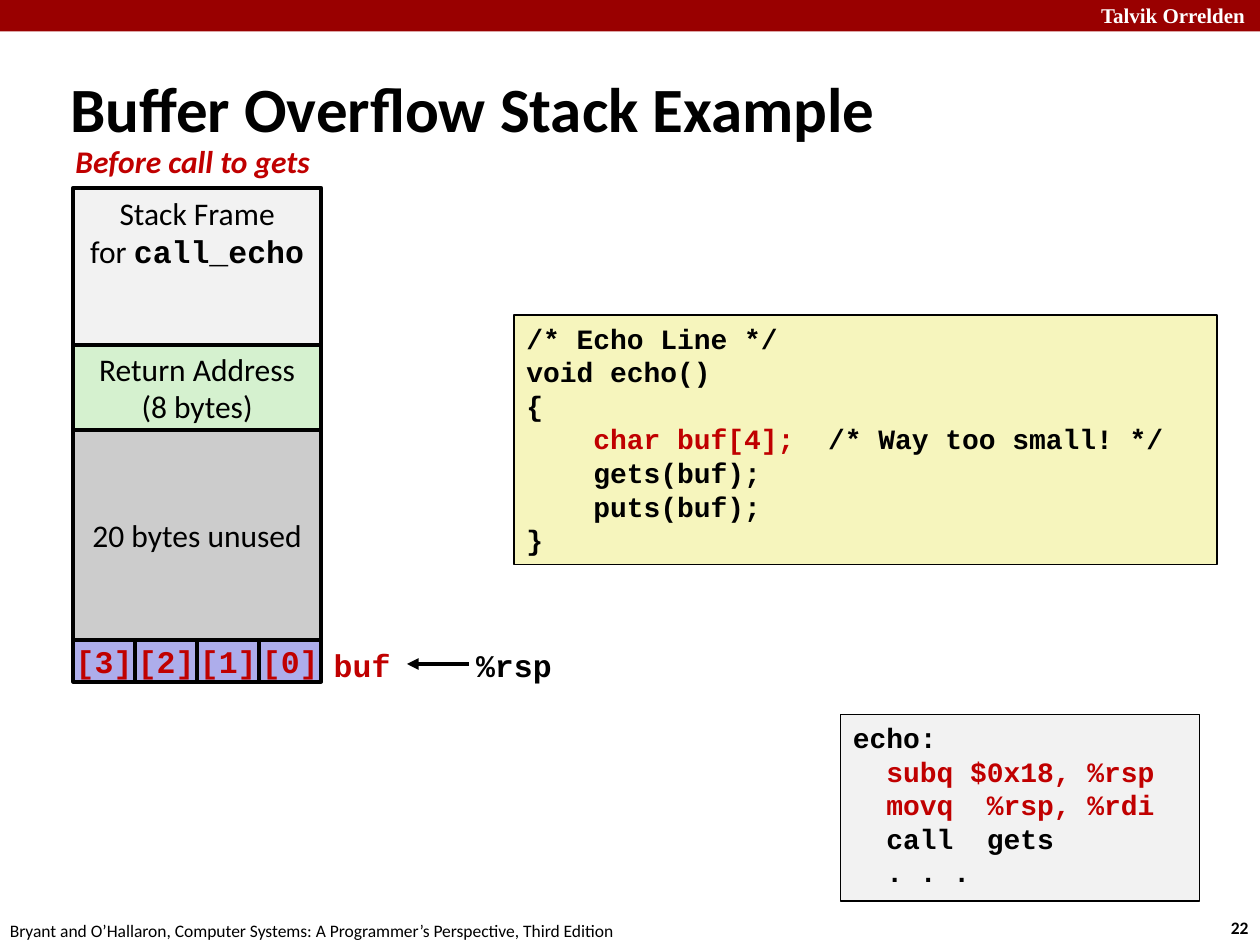
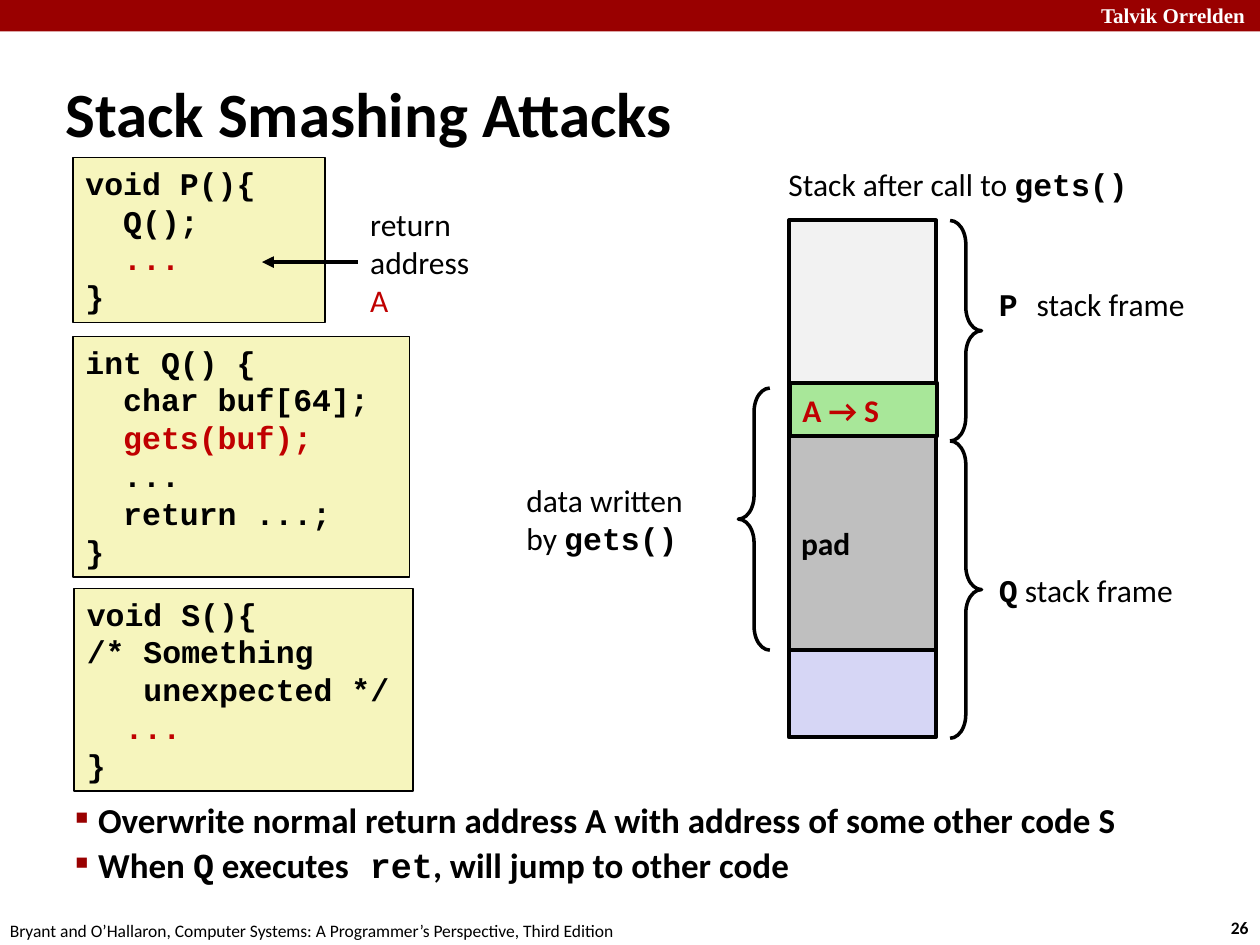
"""Build two slides on buffer overflow and stack smashing."""
import dataclasses
import typing

import lxml.etree
import pptx
import pptx.dml.color
import pptx.enum.shapes
import pptx.enum.text
import pptx.oxml.ns
import pptx.slide
import pptx.util

Inches = pptx.util.Inches
Pt = pptx.util.Pt
Kind = pptx.enum.shapes.MSO_SHAPE
Anchor = pptx.enum.text.MSO_ANCHOR
Align = pptx.enum.text.PP_ALIGN
qn = pptx.oxml.ns.qn

BLACK, WHITE, RED, BAND = "000000", "FFFFFF", "C00000", "990000"
CREAM, PALE, MINT, GREEN = "F6F5BD", "F2F2F2", "D5F1CF", "A8E799"
GREY, DARK, BLUE, LILAC = "CCCCCC", "BFBFBF", "ADADEB", "D6D6F5"
THICK, THIN = 2.25, 1


@dataclasses.dataclass(frozen=True)
class Style:
    """Look of a run of text."""
    font: str = "Calibri"
    size: float = 18
    color: str = BLACK
    bold: bool = False
    slant: bool = False


PLAIN, STRONG = Style(), Style(bold=True)
MONO = Style("Courier New", bold=True)
HOT = dataclasses.replace(MONO, color=RED)
SMALL, SMALL_HOT = (dataclasses.replace(s, size=16) for s in (MONO, HOT))
TITLE = Style(size=36, bold=True)
POINT, POINT_MONO = Style(size=20, bold=True), dataclasses.replace(MONO, size=20)
FOOT = Style(size=10)
HEAD = Style("Times New Roman", 12, WHITE, True)


@dataclasses.dataclass(frozen=True)
class Box:
    """Text box or filled box; each bar in a line swaps base and alt style."""
    left: float
    top: float
    width: float
    height: float
    text: str = ""
    base: Style = PLAIN
    alt: Style = MONO
    fill: str = ""
    edge: float = 0
    mid: bool = False
    center: bool = False
    fit: bool = False


@dataclasses.dataclass(frozen=True)
class Brace:
    """Curly brace beside a stack."""
    kind: Kind
    left: float
    top: float
    height: float


def rgb(code: str) -> pptx.dml.color.RGBColor:
    """Turn a hex string into a colour."""
    return pptx.dml.color.RGBColor.from_string(code)


def tint(run: typing.Any, style: Style) -> None:
    """Apply a style to a run."""
    run.font.name = style.font
    run.font.size = Pt(style.size)
    run.font.color.rgb = rgb(style.color)
    run.font.bold = style.bold
    run.font.italic = style.slant


def write(frame: typing.Any, box: Box) -> None:
    """Fill a text frame with the styled lines of a box."""
    lines = [line.split("|") for line in box.text.split("\n")]
    frame.text = "\n".join(line[0] for line in lines)
    frame.word_wrap = not (box.fit or box.center)
    frame.vertical_anchor = Anchor.MIDDLE if box.mid else Anchor.TOP
    if box.fit:
        frame.auto_size = pptx.enum.text.MSO_AUTO_SIZE.SHAPE_TO_FIT_TEXT
    for para, line in zip(frame.paragraphs, lines):
        para.alignment = Align.CENTER if box.center else Align.LEFT
        for run in para.runs:
            tint(run, box.base)
        for spot, piece in enumerate(line[1:]):
            run = para.add_run()
            run.text = piece
            tint(run, box.base if spot % 2 else box.alt)


def draw(slide: pptx.slide.Slide, box: Box) -> typing.Any:
    """Draw one box and return its shape."""
    place = [Inches(n) for n in (box.left, box.top, box.width, box.height)]
    if box.fill:
        shape = slide.shapes.add_shape(Kind.RECTANGLE, *place)
        shape.shadow.inherit = False
        shape.fill.solid()
        shape.fill.fore_color.rgb = rgb(box.fill)
        if box.edge:
            ink(shape, box.edge)
        else:
            shape.line.fill.background()
    else:
        shape = slide.shapes.add_textbox(*place)
    if box.text:
        write(shape.text_frame, box)
    return shape


def ink(shape: typing.Any, width: float) -> None:
    """Give a shape a black line."""
    shape.line.color.rgb = rgb(BLACK)
    shape.line.width = Pt(width)


def label(left: float, top: float, width: float, height: float, text: str,
          base: Style = PLAIN, alt: Style = MONO) -> Box:
    """Make a label that fits its text."""
    return Box(left, top, width, height, text, base, alt, fit=True)


def code(left: float, top: float, width: float, height: float, text: str,
         base: Style = MONO, alt: Style = HOT, fill: str = CREAM) -> Box:
    """Make a box that lists code."""
    return Box(left, top, width, height, text, base, alt, fill, THIN)


def arrow(slide: pptx.slide.Slide, start: float, end: float, level: float) -> None:
    """Draw a level arrow."""
    line = slide.shapes.add_connector(
        pptx.enum.shapes.MSO_CONNECTOR.STRAIGHT,
        Inches(start), Inches(level), Inches(end), Inches(level))
    ink(line, THICK)
    props = line._element.spPr
    tail = lxml.etree.SubElement(props.find(qn("a:ln")), qn("a:tailEnd"))
    tail.set("type", "triangle")
    lxml.etree.SubElement(props, qn("a:effectLst"))


def clasp(slide: pptx.slide.Slide, brace: Brace) -> None:
    """Draw a brace."""
    shape = slide.shapes.add_shape(
        brace.kind, Inches(brace.left), Inches(brace.top),
        Inches(0.25), Inches(brace.height))
    shape.shadow.inherit = False
    shape.fill.background()
    ink(shape, 2)
    shape.adjustments[0] = 0.75


def bullet(frame: typing.Any) -> None:
    """Mark each paragraph with a small square."""
    for para in frame.paragraphs:
        para.line_spacing = 0.9
        para.space_before = Pt(4)
        props = para._p.get_or_add_pPr()
        props.set("marL", str(Inches(0.18)))
        props.set("indent", str(-Inches(0.18)))
        color = lxml.etree.SubElement(props, qn("a:buClr"))
        lxml.etree.SubElement(color, qn("a:srgbClr")).set("val", BAND)
        lxml.etree.SubElement(props, qn("a:buSzPct")).set("val", "50000")
        lxml.etree.SubElement(props, qn("a:buChar")).set("char", "■")


def start(deck: typing.Any, page: int, title: Box) -> pptx.slide.Slide:
    """Add a slide with the shared band, footer and title."""
    slide = deck.slides.add_slide(deck.slide_layouts[6])
    for box in (
        Box(0, 0, 10, 0.25, fill=BAND),
        Box(8.64, -0.03, 1.43, 0.3, "Talvik Orrelden", HEAD),
        label(9.67, 7.23, 0.37, 0.27, str(page), dataclasses.replace(FOOT, bold=True)),
        label(-0.02, 7.25, 5.08, 0.27, "Bryant and O’Hallaron, Computer Systems: "
              "A Programmer’s Perspective, Third Edition", FOOT),
        title,
    ):
        draw(slide, box)
    return slide


def before(deck: typing.Any) -> None:
    """Build the slide on the stack before the call."""
    slide = start(deck, 22, Box(0.46, 0.54, 7.1, 0.63, "Buffer Overflow Stack Example",
                                TITLE, mid=True))
    left, top, width = 0.58, 1.49, 1.97
    for height, text, fill, mid in (
        (1.25, "Stack Frame\nfor |call_echo", PALE, False),
        (0.67, "Return Address\n(8 bytes)", MINT, True),
        (1.67, "20 bytes unused", GREY, True),
    ):
        draw(slide, Box(left, top, width, height, text, fill=fill, edge=THICK,
                        mid=mid, center=True))
        top += height
    cell = width / 4
    for spot in range(4):
        draw(slide, Box(left + spot * cell, top, cell, 0.33, f"[{3 - spot}]", HOT,
                        fill=BLUE, edge=THICK, mid=True, center=True))
    for box in (
        label(0.5, 1.08, 2.09, 0.4, "Before call to gets",
              Style(color=RED, bold=True, slant=True)),
        label(2.55, 5.08, 0.65, 0.4, "buf", HOT),
        label(3.68, 5.08, 0.81, 0.4, "%rsp", MONO),
        code(4.08, 2.5, 5.58, 1.98, "/* Echo Line */\nvoid echo()\n{\n"
             "    |char buf[4];  |/* Way too small! */\n"
             "    gets(buf);\n    puts(buf);\n}", SMALL, SMALL_HOT),
        code(6.67, 5.67, 2.85, 1.48, "echo:\n  |subq $0x18, %rsp\n"
             "  |movq  %rsp, %rdi\n  call  gets\n  . . .", SMALL, SMALL_HOT, PALE),
    ):
        draw(slide, box)
    arrow(slide, 3.72, 3.23, 5.27)


def smash(deck: typing.Any) -> None:
    """Build the slide on stack smashing."""
    slide = start(deck, 26, Box(0.42, 0.58, 9.08, 0.63, "Stack Smashing Attacks",
                                TITLE, mid=True))
    points = Box(0.5, 6.08, 9.03, 1.25,
                 "Overwrite normal return address A with address of some other code S\n"
                 "When |Q| executes| ret|, will jump to other code",
                 POINT, POINT_MONO, mid=True)
    bullet(draw(slide, points).text_frame)
    for box in (
        code(0.58, 1.25, 2, 1.31, "void P(){\n  Q();\n  |...\n}"),
        code(0.58, 2.67, 2.67, 1.91, "int Q() {\n  char buf[64];\n  |gets(buf);\n"
             "  ...\n  return ...;\n}"),
        code(0.59, 4.67, 2.69, 1.61, "void S(){\n/* Something\n   unexpected */\n"
             "  |...\n}"),
        label(2.84, 1.58, 1, 1.01, "return\naddress\n|A", alt=Style(color=RED)),
        label(6.16, 1.26, 2.93, 0.4, "Stack after call to |gets()"),
        label(7.83, 2.21, 1.7, 0.4, "|P |stack frame"),
        label(7.83, 4.48, 1.61, 0.4, "|Q| stack frame"),
        label(4.08, 3.77, 1.44, 0.71, "data written\nby |gets()"),
        Box(6.26, 1.75, 1.17, 1.7, fill=PALE, edge=THICK),
        Box(6.26, 3.45, 1.17, 2.4, fill=LILAC, edge=THICK),
        Box(6.26, 3.45, 1.17, 1.71, "pad", STRONG, fill=DARK, edge=THICK, mid=True),
        Box(6.27, 3.04, 1.17, 0.42, "A → S", Style(color=RED, bold=True),
            fill=GREEN, edge=THICK, mid=True),
    ):
        draw(slide, box)
    for brace in (
        Brace(Kind.RIGHT_BRACE, 7.54, 1.75, 1.75),
        Brace(Kind.RIGHT_BRACE, 7.54, 3.5, 2.36),
        Brace(Kind.LEFT_BRACE, 5.86, 3.08, 2.08),
    ):
        clasp(slide, brace)
    arrow(slide, 2.84, 2.08, 2.08)


def main() -> None:
    """Build and save the deck."""
    deck = pptx.Presentation()
    deck.slide_width, deck.slide_height = Inches(10), Inches(7.5)
    before(deck)
    smash(deck)
    deck.save("out.pptx")


if __name__ == "__main__":
    main()
